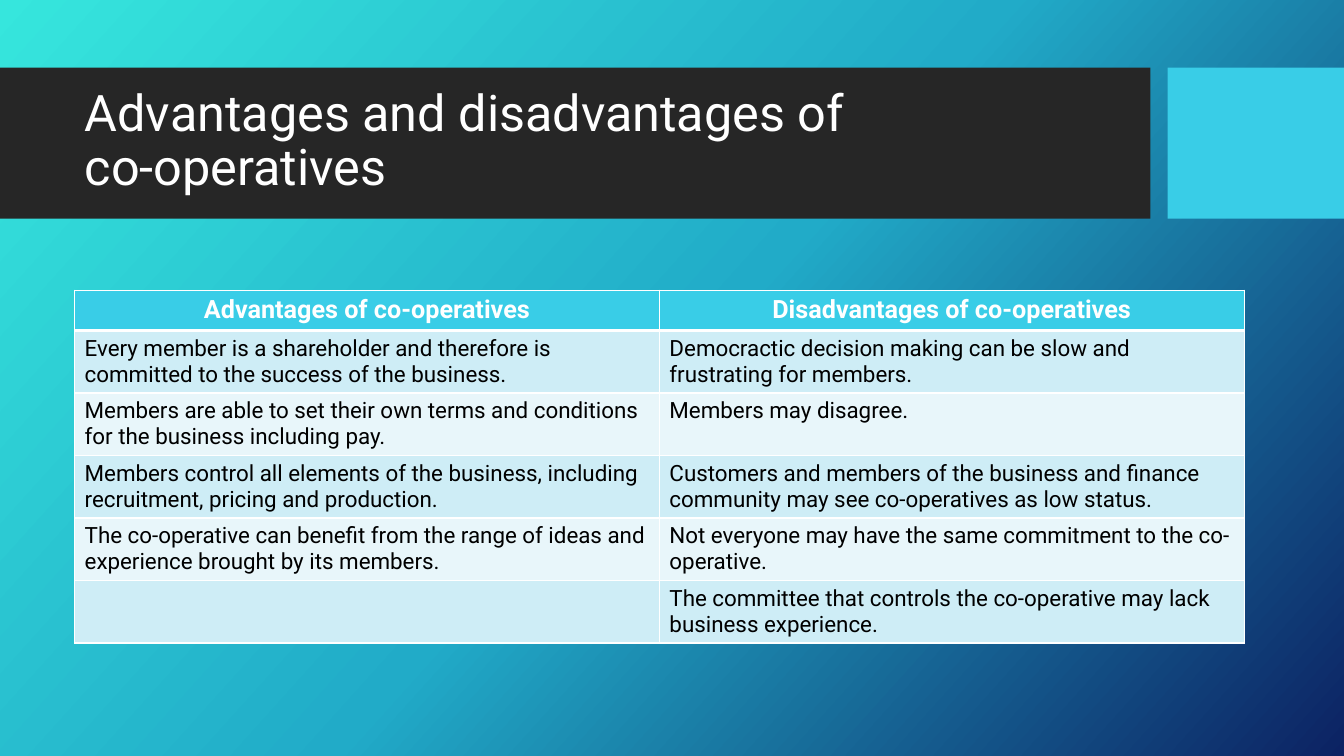
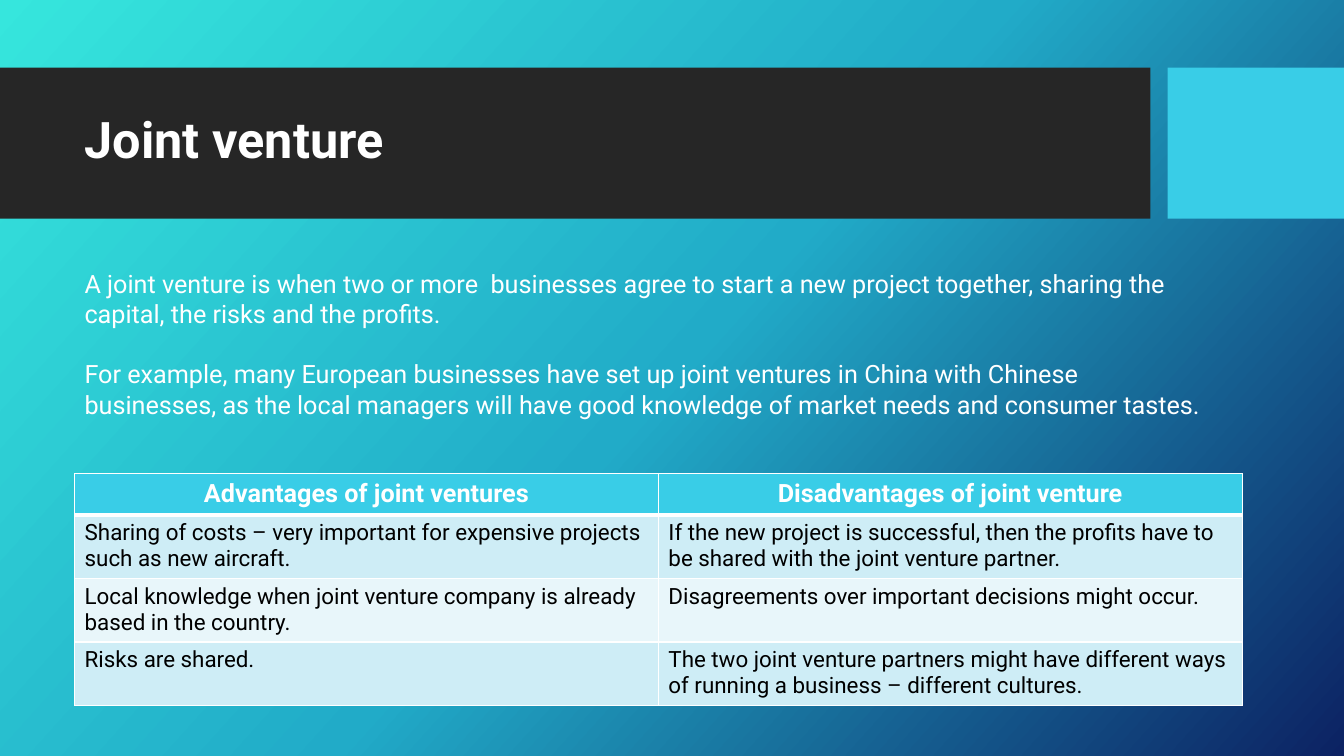
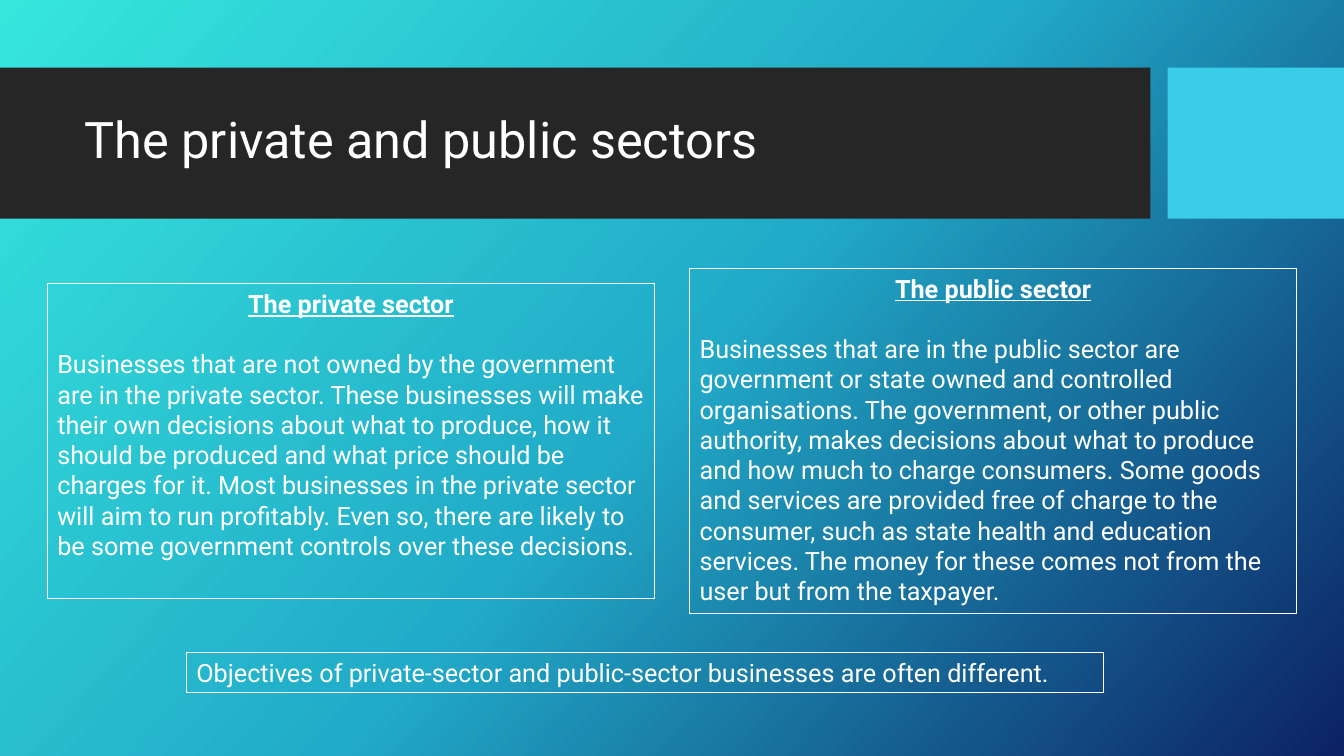
"""Build three slides on types of business organisation."""
from copy import deepcopy
from dataclasses import dataclass

from lxml.etree import SubElement
from pptx import Presentation
from pptx.dml.color import RGBColor
from pptx.enum.shapes import MSO_SHAPE
from pptx.enum.text import MSO_ANCHOR, MSO_AUTO_SIZE, PP_ALIGN
from pptx.oxml.ns import qn
from pptx.util import Inches, Pt


@dataclass(frozen=True)
class Theme:
    """Colours, font and type sizes of the deck."""
    font: str = "Roboto"
    white: str = "FFFFFF"
    black: str = "000000"
    dark: str = "262626"
    aqua: str = "39CDE7"
    rows: tuple = ("CEEDF6", "E8F6FA")
    glow: tuple = ((0, "36E6DD"), (0.5, "21ABC8"), (1, "0C2263"))
    angle: int = 318
    title: int = 36
    text: int = 18
    cell: int = 16
    gap: float = 21.6


def put(item, **values):
    """Set each given value on the item."""
    for name, value in values.items():
        setattr(item, name, value)


def rgb(code):
    """Turn a hex code into a colour."""
    return RGBColor.from_string(code)


class Deck:
    """Hold the style and the current slide."""

    def __init__(self, theme):
        """Set the size, the layout and the shared background."""
        self.theme = theme
        self.show = Presentation()
        put(self.show, slide_width=Inches(13.33), slide_height=Inches(7.5))
        self.layout = self.show.slide_layouts[5]
        for holder in list(self.layout.placeholders)[1:]:
            self.layout.shapes.element.remove(holder.element)
        self.glow()

    def glow(self):
        """Fill the master background with the gradient."""
        master = self.show.slide_master
        fill = master.background.fill
        fill.gradient()
        fill.gradient_angle = self.theme.angle
        stops = master.element.find(f".//{qn('a:gsLst')}")
        stops.insert(1, deepcopy(stops[0]))
        for stop, (place, code) in zip(fill.gradient_stops, self.theme.glow):
            stop.position = place
            stop.color.rgb = rgb(code)

    def bands(self):
        """Place the two title bands on the layout."""
        for left, width, code in ((0, 11.41, self.theme.dark),
                                  (11.58, 1.75, self.theme.aqua)):
            band = self.slide.shapes.add_shape(
                MSO_SHAPE.RECTANGLE, Inches(left), Inches(0.67),
                Inches(width), Inches(1.5))
            band.shadow.inherit = False
            band.fill.solid()
            band.fill.fore_color.rgb = rgb(code)
            band.line.fill.background()
            self.layout.shapes.element.insert(2, band.element)

    def style(self, para, size, code, **values):
        """Format one paragraph."""
        put(para.font, name=self.theme.font, size=Pt(size), **values)
        para.font.color.rgb = rgb(code)

    def page(self, text, bold=False):
        """Start a slide with its title."""
        self.slide = self.show.slides.add_slide(self.layout)
        if len(self.show.slides) == 1:
            self.bands()
        title = self.slide.shapes.title
        put(title, left=Inches(0.74), top=Inches(0.82),
            width=Inches(10.51), height=Inches(1.18))
        frame = title.text_frame
        frame.text = text
        put(frame, auto_size=MSO_AUTO_SIZE.NONE, word_wrap=True,
            vertical_anchor=MSO_ANCHOR.MIDDLE)
        para = frame.paragraphs[0]
        put(para, alignment=PP_ALIGN.LEFT, line_spacing=0.9)
        self.style(para, self.theme.title, self.theme.white, bold=bold)

    def note(self, spot, *texts, head=False, frame=True):
        """Add a text box, with a heading or an outline if asked."""
        box = self.slide.shapes.add_textbox(*map(Inches, spot))
        if frame:
            box.line.color.rgb = rgb(self.theme.white)
            box.line.width = Pt(0.75)
        body = box.text_frame
        put(body, word_wrap=True, auto_size=MSO_AUTO_SIZE.NONE)
        body.text = "\n".join(texts)
        for num, para in enumerate(body.paragraphs):
            top = head and num == 0
            para.alignment = PP_ALIGN.CENTER if top else PP_ALIGN.LEFT
            if num:
                para.space_before = Pt(self.theme.gap)
            self.style(para, self.theme.text, self.theme.white,
                       bold=top, underline=top)

    def edge(self, cell, row):
        """Draw the borders of a cell, thick under the header."""
        wide = {"T": 3 if row == 1 else 1, "B": 3 if row == 0 else 1}
        props = cell.fill._xPr
        for num, side in enumerate("LRTB"):
            line = SubElement(props, qn(f"a:ln{side}"),
                              w=str(Pt(wide.get(side, 1))))
            paint = SubElement(line, qn("a:solidFill"))
            SubElement(paint, qn("a:srgbClr"), val=self.theme.white)
            props.insert(num, line)

    def table(self, top, width, first, high, rows):
        """Add a two-column table with a header row."""
        tall = first + high * (len(rows) - 1)
        grid = self.slide.shapes.add_table(
            len(rows), 2, Inches(0.74), Inches(top),
            Inches(width), Inches(tall)).table
        grid.horz_banding = False
        for num, texts in enumerate(rows):
            head = num == 0
            grid.rows[num].height = Inches(first if head else high)
            shade = self.theme.aqua if head else self.theme.rows[(num - 1) % 2]
            for col, text in enumerate(texts):
                cell = grid.cell(num, col)
                cell.text = text
                cell.fill.solid()
                cell.fill.fore_color.rgb = rgb(shade)
                self.edge(cell, num)
                para = cell.text_frame.paragraphs[0]
                para.alignment = PP_ALIGN.CENTER if head else PP_ALIGN.LEFT
                self.style(para, self.theme.text if head else self.theme.cell,
                           self.theme.white if head else self.theme.black,
                           bold=head)


def main():
    """Build and save the slides."""
    deck = Deck(Theme())

    deck.page("Advantages and disadvantages of \vco-operatives")
    deck.table(2.88, 11.6, 0.4, 0.62, (
        ("Advantages of co-operatives", "Disadvantages of co-operatives"),
        ("Every member is a shareholder and therefore is committed to the "
         "success of the business.",
         "Democractic decision making can be slow and frustrating for "
         "members."),
        ("Members are able to set their own terms and conditions for the "
         "business including pay.",
         "Members may disagree."),
        ("Members control all elements of the business, including "
         "recruitment, pricing and production.",
         "Customers and members of the business and finance community may "
         "see co-operatives as low status."),
        ("The co-operative can benefit from the range of ideas and "
         "experience brought by its members.",
         "Not everyone may have the same commitment to the co-operative."),
        ("",
         "The committee that controls the co-operative may lack business "
         "experience."),
    ))

    deck.page("Joint venture", bold=True)
    deck.note(
        (0.74, 2.61, 11.42, 1.62),
        "A joint venture is when two or more  businesses agree to start a "
        "new project together, sharing the capital, the risks and the "
        "profits.",
        "For example, many European businesses have set up joint ventures "
        "in China with Chinese businesses, as the local managers will have "
        "good knowledge of market needs and consumer tastes.",
        frame=False)
    deck.table(4.7, 11.58, 0.41, 0.63, (
        ("Advantages of joint ventures", "Disadvantages of joint venture"),
        ("Sharing of costs – very important for expensive projects such as "
         "new aircraft.",
         "If the new project is successful, then the profits have to be "
         "shared with the joint venture partner."),
        ("Local knowledge when joint venture company is already based in "
         "the country.",
         "Disagreements over important decisions might occur."),
        ("Risks are shared.",
         "The two joint venture partners might have different ways of "
         "running a business – different cultures."),
    ))

    deck.page("The private and public sectors")
    deck.note(
        (0.47, 2.81, 6.02, 3.13),
        "The private sector",
        "Businesses that are not owned by the government are in the private "
        "sector. These businesses will make their own decisions about what "
        "to produce, how it should be produced and what price should be "
        "charges for it. Most businesses in the private sector will aim to "
        "run profitably. Even so, there are likely to be some government "
        "controls over these decisions.",
        head=True)
    deck.note(
        (6.84, 2.66, 6.02, 3.43),
        "The public sector",
        "Businesses that are in the public sector are government or state "
        "owned and controlled organisations. The government, or other "
        "public authority, makes decisions about what to produce and how "
        "much to charge consumers. Some goods and services are provided "
        "free of charge to the consumer, such as state health and education "
        "services. The money for these comes not from the user but from the "
        "taxpayer.",
        head=True)
    deck.note(
        (1.85, 6.47, 9.1, 0.4),
        "Objectives of private-sector and public-sector businesses are "
        "often different.")

    deck.show.save("out.pptx")


if __name__ == "__main__":
    main()
